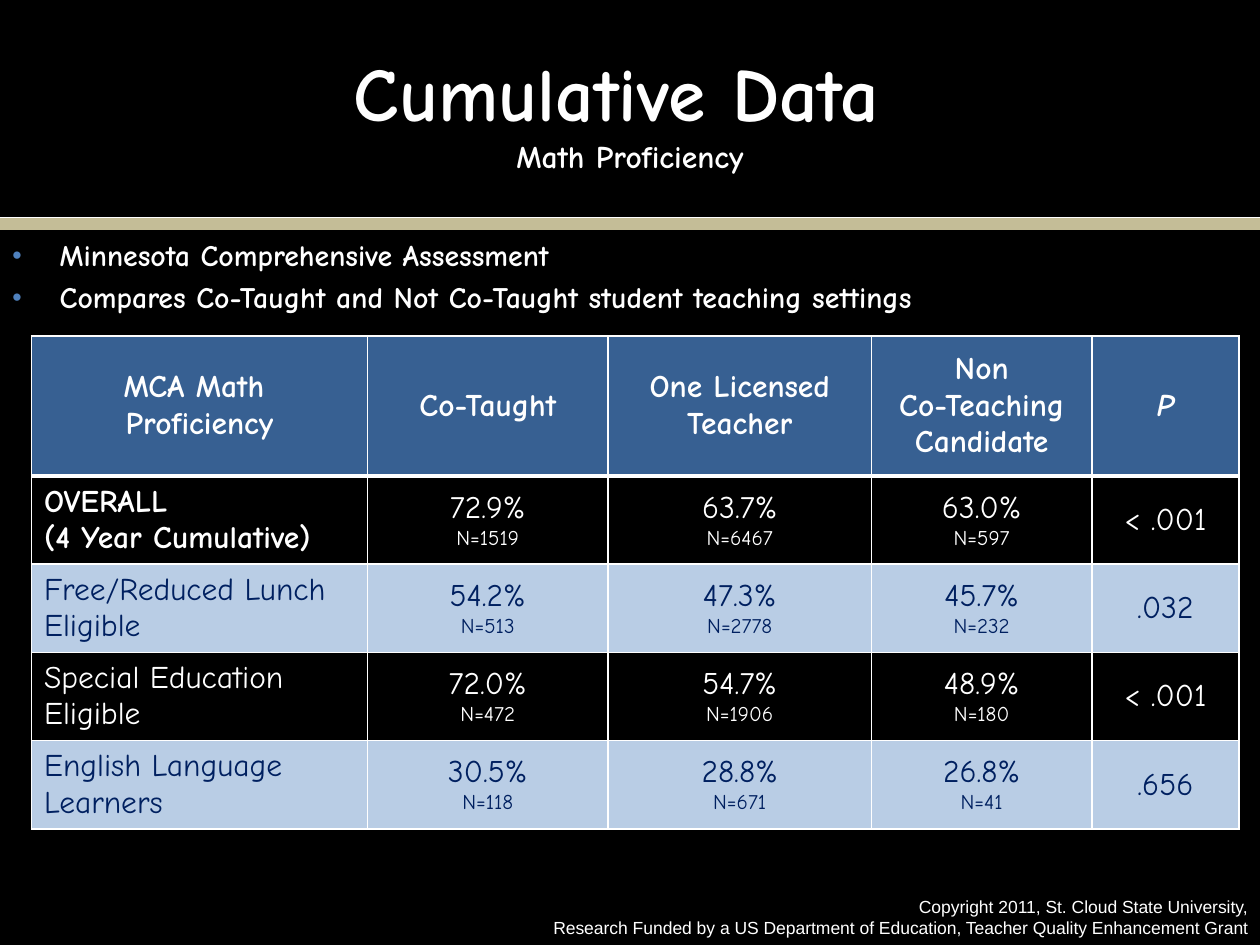
from dataclasses import dataclass

from pptx import Presentation
from pptx.dml.color import RGBColor as Color
from pptx.enum.shapes import MSO_CONNECTOR as Connector
from pptx.enum.text import MSO_ANCHOR as Anchor, PP_ALIGN as Align
from pptx.oxml.ns import qn
from pptx.util import Pt
from lxml.etree import SubElement


@dataclass(frozen=True)
class Theme:
    black: str = "000000"
    white: str = "FFFFFF"
    tan: str = "C4BD97"
    header: str = "376092"
    band: str = "B9CDE5"
    navy: str = "002060"
    bullet: str = "4F81BD"
    font: str = "Comic Neue"
    footer_font: str = "Arial"
    title_size: float = 43.2
    table_size: float = 18
    bullet_size: float = 17
    count_size: float = 12
    footer_size: float = 10


THEME = Theme()

BULLETS = [
    "Minnesota Comprehensive Assessment",
    "Compares Co-Taught and Not Co-Taught student teaching settings",
]
FOOTER = [
    "Copyright 2011, St. Cloud State University,",
    "Research Funded by a US Department of Education, Teacher Quality Enhancement Grant",
]
ROWS = [
    ["MCA Math \nProficiency", "Co-Taught", "One Licensed Teacher",
     "Non\nCo-Teaching\nCandidate", "P"],
    ["OVERALL\n(4 Year Cumulative)", "72.9%\nN=1519", "63.7%\nN=6467",
     "63.0%\nN=597", "< .001"],
    ["Free/Reduced Lunch Eligible", "54.2%\nN=513", "47.3%\nN=2778",
     "45.7%\nN=232", ".032"],
    ["Special Education Eligible", "72.0%\nN=472", "54.7%\nN=1906",
     "48.9%\nN=180", "< .001"],
    ["English Language Learners", "30.5%\nN=118", "28.8%\nN=671",
     "26.8%\nN=41", ".656"],
]
COLUMN_WIDTHS = [192, 137.5, 150.5, 126, 84]
HEADER_HEIGHT, ROW_HEIGHT = 80, 45.4


def style_span(span, size, color=THEME.white, bold=False, font=THEME.font):
    span.font.name = font
    span.font.size = Pt(size)
    span.font.bold = bold
    span.font.color.rgb = Color.from_string(color)


def place(shape, left, top, width, height):
    shape.left, shape.top = Pt(left), Pt(top)
    shape.width, shape.height = Pt(width), Pt(height)


def add_title(page):
    title = page.shapes.title
    place(title, 24, 24, 672, 78)
    frame = title.text_frame
    frame.vertical_anchor = Anchor.MIDDLE
    frame.text = "Cumulative Data \vMath Proficiency"
    para = frame.paragraphs[0]
    para.alignment = Align.CENTER
    for span, size in zip(para.runs, (THEME.title_size, THEME.table_size)):
        style_span(span, size, bold=True)


def add_rule(page, y, color, weight):
    rule = page.shapes.add_connector(Connector.STRAIGHT, Pt(0), Pt(y), Pt(720), Pt(y))
    rule.line.color.rgb = Color.from_string(color)
    rule.line.width = Pt(weight)
    SubElement(rule.element.spPr, qn("a:effectLst"))


def add_text(page, bounds, lines, **style):
    box = page.shapes.add_textbox(*map(Pt, bounds))
    frame = box.text_frame
    frame.word_wrap = True
    frame.text = "\n".join(lines)
    for para in frame.paragraphs:
        style_span(para.runs[0], **style)
    return frame.paragraphs


def add_bullet(para):
    para.space_before = Pt(3.4)
    props = para._p.get_or_add_pPr()
    props.set("marL", str(Pt(27)))
    props.set("indent", str(Pt(-27)))
    SubElement(SubElement(props, qn("a:buClr")), qn("a:srgbClr"), val=THEME.bullet)
    SubElement(props, qn("a:buSzPct"), val="90000")
    SubElement(props, qn("a:buFont"), typeface="Arial")
    SubElement(props, qn("a:buChar"), char="•")


def set_borders(cell, top, bottom):
    props = cell._tc.get_or_add_tcPr()
    for side, weight in (("L", 1), ("R", 1), ("T", top), ("B", bottom)):
        line = SubElement(props, qn(f"a:ln{side}"), w=str(Pt(weight)))
        fill = SubElement(line, qn("a:solidFill"))
        SubElement(fill, qn("a:srgbClr"), val=THEME.white)


def fill_cell(cell, text, row, column):
    is_header, is_band = row == 0, row in (2, 4)
    set_borders(cell, top=3 if row == 1 else 1, bottom=3 if is_header else 1)
    if is_header or is_band:
        cell.fill.solid()
        cell.fill.fore_color.rgb = Color.from_string(
            THEME.header if is_header else THEME.band)
    else:
        cell.fill.background()

    cell.vertical_anchor = Anchor.MIDDLE
    cell.text_frame.text = text
    for para in cell.text_frame.paragraphs:
        para.alignment = Align.CENTER if is_header or column else Align.LEFT
        span = para.runs[0]
        size = THEME.count_size if span.text.startswith("N=") else THEME.table_size
        style_span(span, size, THEME.navy if is_band else THEME.white,
                   bold=is_header or (row == 1 and column == 0))
        span.font.italic = text == "P"


def add_results(page):
    height = HEADER_HEIGHT + ROW_HEIGHT * (len(ROWS) - 1)
    table = page.shapes.add_table(len(ROWS), len(COLUMN_WIDTHS), Pt(18), Pt(192),
                                  Pt(sum(COLUMN_WIDTHS)), Pt(height)).table
    table.first_row = table.horz_banding = False
    for column, width in zip(table.columns, COLUMN_WIDTHS):
        column.width = Pt(width)
    for r, texts in enumerate(ROWS):
        table.rows[r].height = Pt(ROW_HEIGHT if r else HEADER_HEIGHT)
        for c, text in enumerate(texts):
            fill_cell(table.cell(r, c), text, r, c)


def main():
    deck = Presentation()
    deck.slide_width, deck.slide_height = Pt(720), Pt(540)
    page = deck.slides.add_slide(deck.slide_layouts[5])
    page.background.fill.solid()
    page.background.fill.fore_color.rgb = Color.from_string(THEME.black)

    # Heading and the double rule below it
    add_rule(page, 128, THEME.tan, 7)
    add_rule(page, 124.5, THEME.white, 0.5)
    add_title(page)

    # Bulleted introduction
    for para in add_text(page, (0, 132, 670, 48), BULLETS,
                         size=THEME.bullet_size, bold=True):
        add_bullet(para)

    # Results table
    add_results(page)

    # Copyright note
    for para in add_text(page, (282, 508.5, 438, 31.5), FOOTER,
                         size=THEME.footer_size, font=THEME.footer_font):
        para.alignment = Align.RIGHT

    deck.save("out.pptx")


if __name__ == "__main__":
    main()
